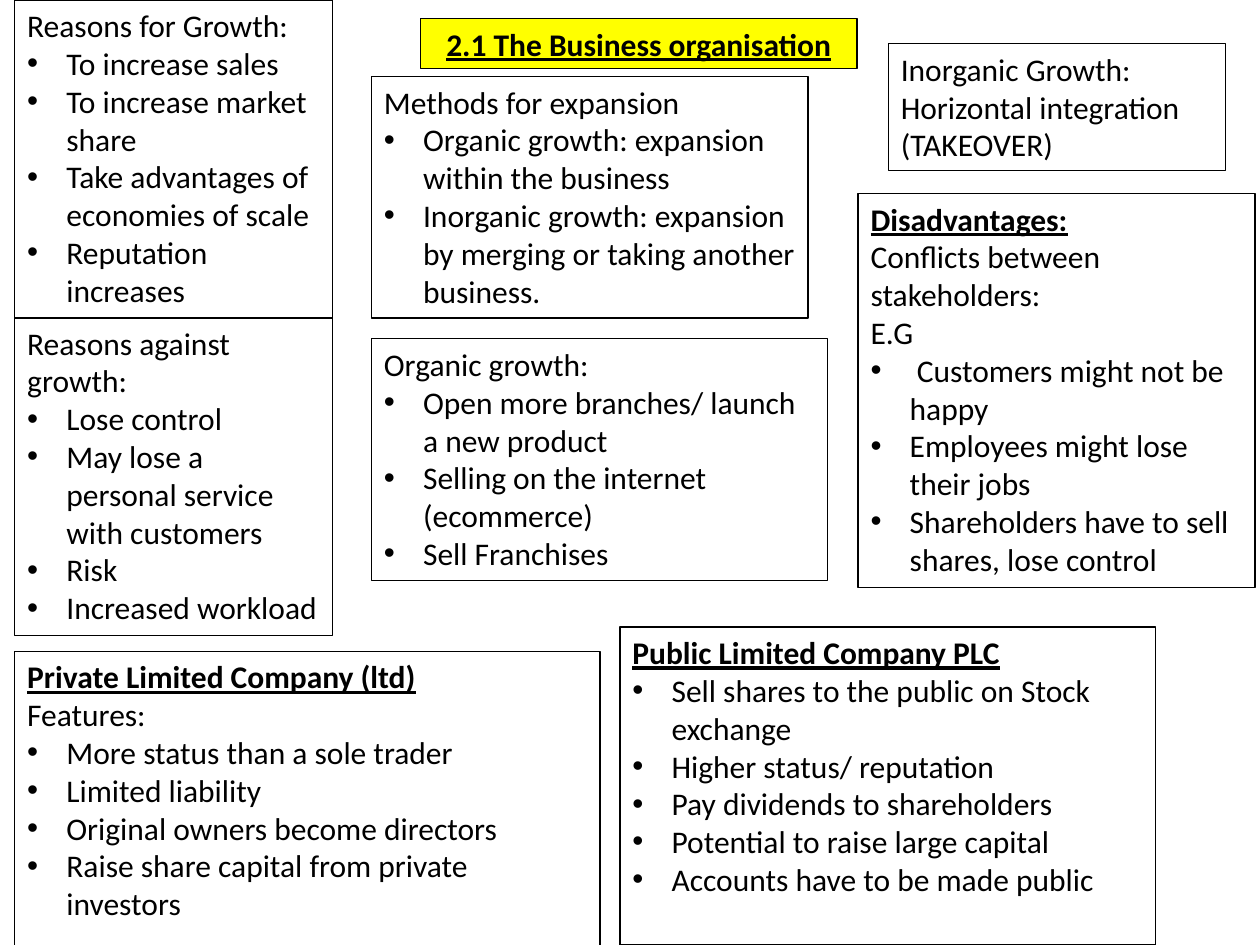
import dataclasses

import lxml.etree
import pptx
import pptx.dml.color
import pptx.enum.shapes
import pptx.enum.text
import pptx.oxml.ns
import pptx.util

Cm, Pt = pptx.util.Cm, pptx.util.Pt
RGBColor = pptx.dml.color.RGBColor


@dataclasses.dataclass(frozen=True)
class Theme:
    ink: RGBColor = RGBColor(0, 0, 0)
    highlight: RGBColor = RGBColor(255, 255, 0)
    font: str = "Calibri"
    text_size: int = Pt(18)
    outline: int = Pt(0.75)
    bullet_indent: int = Cm(0.79)


THEME = Theme()
PLAIN = {"name": THEME.font, "size": THEME.text_size}
EMPHASIS = {**PLAIN, "bold": True, "underline": True}

LEFT_COLUMN, MIDDLE_COLUMN = 0.3, 7.49

# Each note: box (left, top, width in cm, height in lines), heading style,
# heading, plain lines, bulleted lines
NOTES = [
    ((LEFT_COLUMN, 0, 6.4, 8), PLAIN, "Reasons for Growth:", [],
     ["To increase sales", "To increase market share",
      "Take advantages of economies of scale", "Reputation increases"]),
    ((LEFT_COLUMN, 6.4, 6.4, 8), PLAIN, "Reasons against growth:", [],
     ["Lose control", "May lose a personal service with customers",
      "Risk", "Increased workload"]),
    ((MIDDLE_COLUMN, 1.54, 8.8, 6), PLAIN, "Methods for expansion", [],
     ["Organic growth: expansion within the business",
      "Inorganic growth: expansion by merging or taking another business."]),
    ((MIDDLE_COLUMN, 6.83, 9.2, 6), PLAIN, "Organic growth:", [],
     ["Open more branches/ launch a new product",
      "Selling on the internet (ecommerce)", "Sell Franchises"]),
    ((17.91, 0.88, 6.8, 3), PLAIN, "Inorganic Growth:",
     ["Horizontal integration (TAKEOVER)"], []),
    ((17.3, 3.9, 8, 10), EMPHASIS, "Disadvantages:",
     ["Conflicts between stakeholders:", "E.G"],
     [" Customers might not be happy", "Employees might lose their jobs",
      "Shareholders have to sell shares, lose control"]),
    ((LEFT_COLUMN, 13.13, 11.8, 10), EMPHASIS, "Private Limited Company (ltd)",
     ["Features:"],
     ["More status than a sole trader", "Limited liability",
      "Original owners become directors",
      "Raise share capital from private investors"]),
    ((12.5, 12.64, 10.8, 8), EMPHASIS, "Public Limited Company PLC", [],
     ["Sell shares to the public on Stock exchange",
      "Higher status/ reputation", "Pay dividends to shareholders",
      "Potential to raise large capital", "Accounts have to be made public"]),
]


def height_of(lines):
    """Height in cm of a box that holds the given number of text lines."""
    return 0.25 + 0.77 * lines


def add_frame(slide, box, fill=None):
    """Add an outlined rectangle and return it, ready for text."""
    left, top, width, lines = box
    frame = slide.shapes.add_shape(
        pptx.enum.shapes.MSO_SHAPE.RECTANGLE,
        Cm(left), Cm(top), Cm(width), Cm(height_of(lines)))
    frame.shadow.inherit = False
    if fill is None:
        frame.fill.background()
    else:
        frame.fill.solid()
        frame.fill.fore_color.rgb = fill
    frame.line.color.rgb = THEME.ink
    frame.line.width = THEME.outline
    frame.text_frame.word_wrap = True
    frame.text_frame.vertical_anchor = pptx.enum.text.MSO_ANCHOR.TOP
    return frame


def write(paragraph, wording, style, align=pptx.enum.text.PP_ALIGN.LEFT):
    paragraph.alignment = align
    run = paragraph.add_run()
    run.text = wording
    for attribute, value in style.items():
        setattr(run.font, attribute, value)
    run.font.color.rgb = THEME.ink


def add_bullet(paragraph):
    properties = paragraph._p.get_or_add_pPr()
    properties.set("marL", str(THEME.bullet_indent))
    properties.set("indent", str(-THEME.bullet_indent))
    for tag, attribute, value in (("a:buFont", "typeface", "Arial"),
                                  ("a:buChar", "char", "•")):
        mark = lxml.etree.SubElement(properties, pptx.oxml.ns.qn(tag))
        mark.set(attribute, value)


def add_title(slide, box, wording):
    banner = add_frame(slide, box, THEME.highlight)
    write(banner.text_frame.paragraphs[0], wording, EMPHASIS,
          pptx.enum.text.PP_ALIGN.CENTER)


def add_note(slide, box, heading_style, heading, plain_lines, bullets):
    note = add_frame(slide, box).text_frame
    write(note.paragraphs[0], heading, heading_style)
    for line in plain_lines:
        write(note.add_paragraph(), line, PLAIN)
    for bullet in bullets:
        paragraph = note.add_paragraph()
        write(paragraph, bullet, PLAIN)
        add_bullet(paragraph)


def main():
    deck = pptx.Presentation()
    deck.slide_width, deck.slide_height = Cm(25.4), Cm(19.05)
    slide = deck.slides.add_slide(deck.slide_layouts[6])
    add_title(slide, (8.48, 0.37, 8.8, 1), "2.1 The Business organisation")
    for note in NOTES:
        add_note(slide, *note)
    deck.save("out.pptx")


if __name__ == "__main__":
    main()
